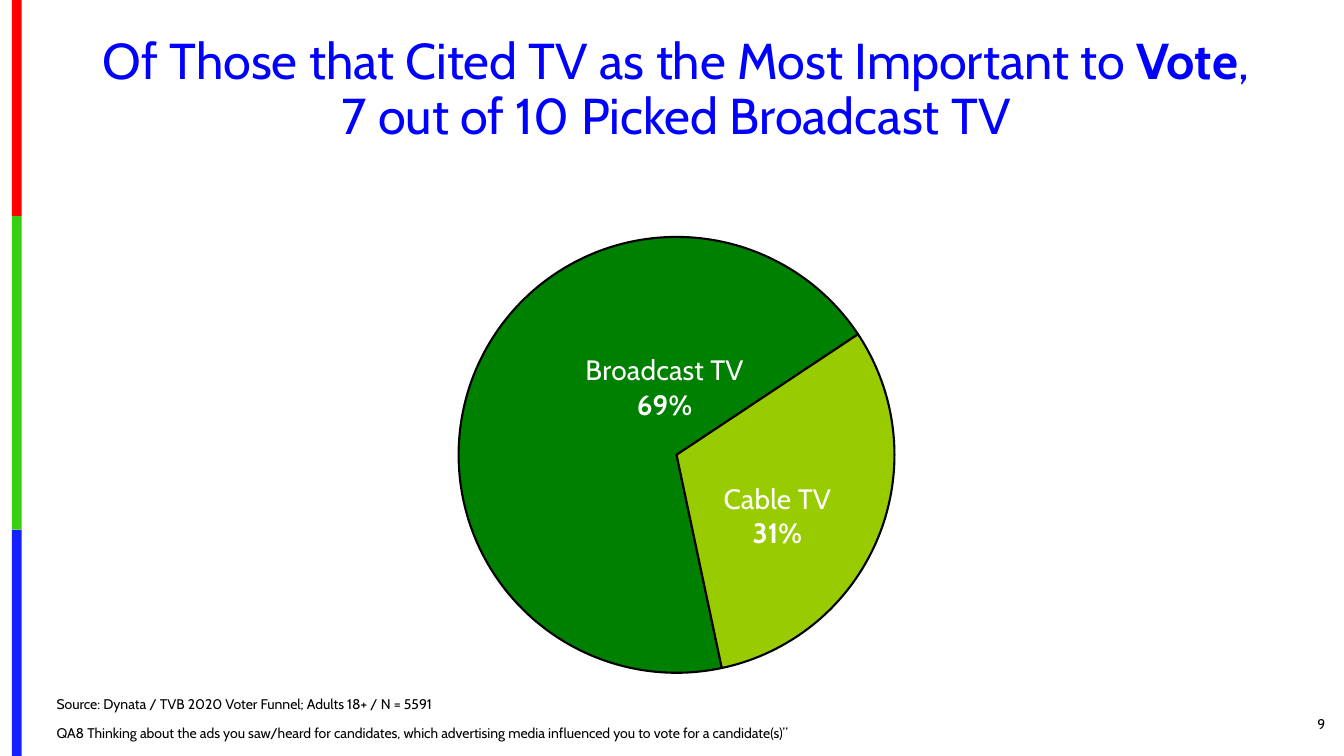
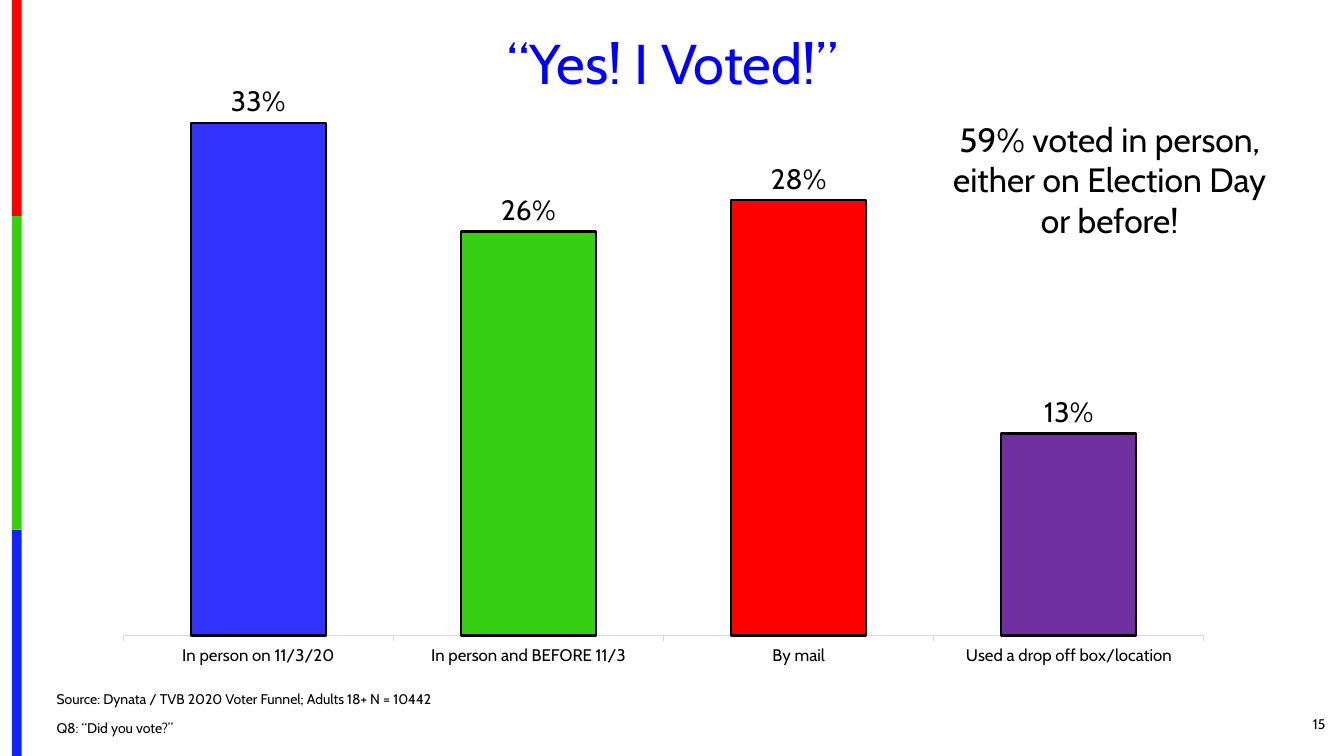
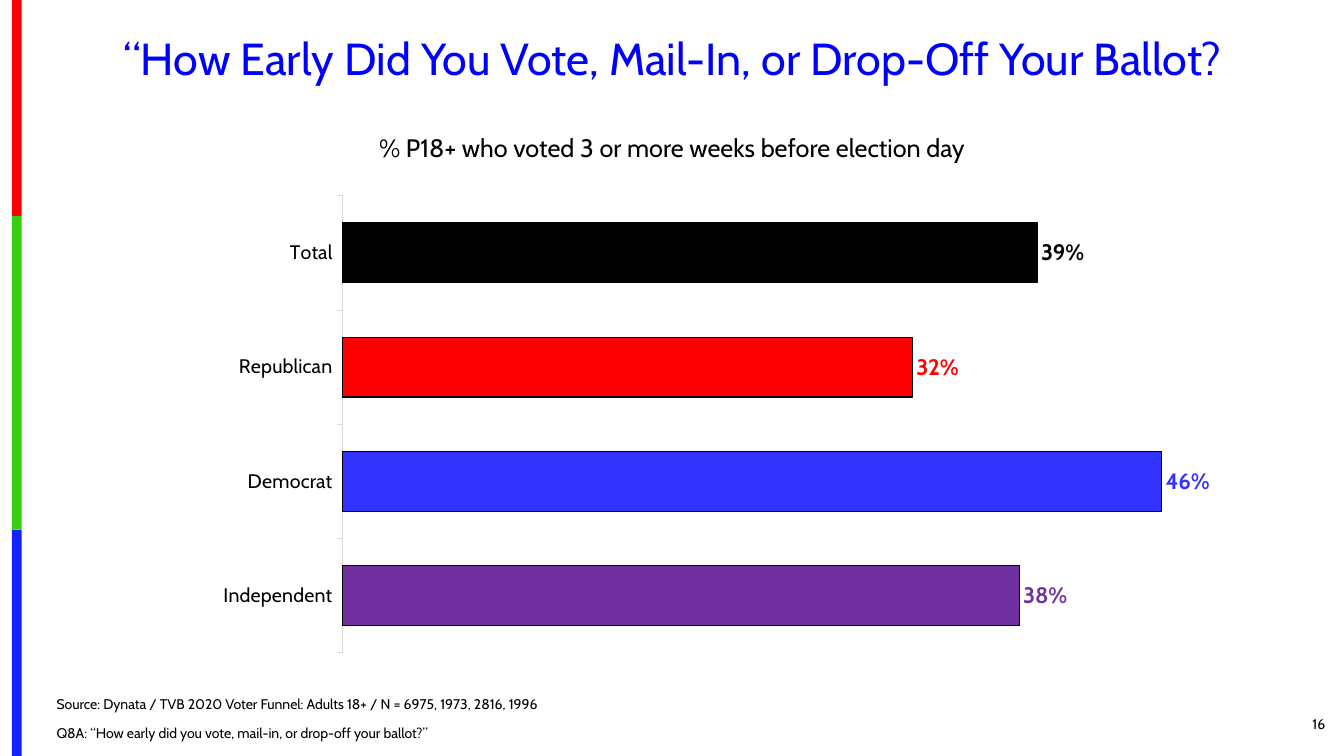
import copy
from dataclasses import dataclass

import pptx
import pptx.chart.chart
import pptx.chart.data
import pptx.dml.color
import pptx.enum.chart
import pptx.enum.shapes
import pptx.enum.text
import pptx.oxml
import pptx.oxml.ns
import pptx.slide
import pptx.text.text
import pptx.util

Cm, Pt = pptx.util.Cm, pptx.util.Pt
Align = pptx.enum.text.PP_ALIGN
Anchor = pptx.enum.text.MSO_ANCHOR
ChartType = pptx.enum.chart.XL_CHART_TYPE
LabelPosition = pptx.enum.chart.XL_LABEL_POSITION

FONT = "Cabin"
BLACK, WHITE, TITLE_BLUE, AXIS_GREY = "000000", "FFFFFF", "0000FF", "D9D9D9"
RED, GREEN, BLUE, PURPLE = "FF0000", "36CF13", "3333FF", "7030A0"
BROADCAST_GREEN, CABLE_GREEN = "008000", "99CC00"


@dataclass
class Box:
    """A place on the slide, in centimetres."""
    left: float
    top: float
    width: float
    height: float

    def lengths(self) -> tuple:
        return Cm(self.left), Cm(self.top), Cm(self.width), Cm(self.height)


@dataclass
class Stripe:
    top: float
    height: float
    color: str


@dataclass
class Span:
    text: str
    bold: bool = False


@dataclass
class Answer:
    label: str
    share: float
    color: str


@dataclass
class Frame:
    """What every slide carries: title, source lines and number."""
    title: list[list[Span]]
    title_box: Box
    title_size: int
    source_lines: list[str]
    source_box: Box
    number: str


@dataclass
class BarStyle:
    kind: ChartType
    top_share: float
    gap: int
    overlap: int
    line: float
    axis_size: int
    label_size: int
    bold_colored_labels: bool = False


STRIPES = [Stripe(0, 5.45, "FE0000"), Stripe(5.45, 7.9, "36CF12"),
           Stripe(13.35, 5.7, "1322FE")]
NUMBER_BOX = Box(30.91, 17.73, 2.74, 1.02)


def rgb(color: str) -> pptx.dml.color.RGBColor:
    return pptx.dml.color.RGBColor.from_string(color)


def style_font(font: pptx.text.text.Font, size: int, color: str,
               bold: bool = False) -> None:
    font.name, font.size, font.bold = FONT, Pt(size), bold
    font.color.rgb = rgb(color)


def add_run(paragraph, span: Span, size: int, color: str):
    run = paragraph.add_run()
    run.text = span.text
    style_font(run.font, size, color, span.bold)
    return run


def place(shape, box: Box) -> None:
    shape.left, shape.top, shape.width, shape.height = box.lengths()


def fit(frame, anchor: Anchor) -> None:
    frame.word_wrap = True
    frame.vertical_anchor = anchor
    frame.auto_size = pptx.enum.text.MSO_AUTO_SIZE.SHAPE_TO_FIT_TEXT


def add_text(slide: pptx.slide.Slide, box: Box, lines: list[str], size: int,
             align: Align, anchor: Anchor = Anchor.TOP) -> None:
    frame = slide.shapes.add_textbox(*box.lengths()).text_frame
    frame.word_wrap = True
    frame.vertical_anchor = anchor
    for index, line in enumerate(lines):
        paragraph = frame.add_paragraph() if index else frame.paragraphs[0]
        paragraph.alignment = align
        add_run(paragraph, Span(line), size, BLACK)


def add_stripes(slide: pptx.slide.Slide) -> None:
    """Draw the edge stripes and hand them to the shared layout."""
    for stripe in STRIPES:
        band = slide.shapes.add_shape(
            pptx.enum.shapes.MSO_SHAPE.RECTANGLE,
            *Box(0.3, stripe.top, 0.25, stripe.height).lengths())
        band.shadow.inherit = False
        band.fill.solid()
        band.fill.fore_color.rgb = rgb(stripe.color)
        band.line.fill.background()
        slide.slide_layout.shapes.element.append(band.element)


def add_slide(deck, frame: Frame) -> pptx.slide.Slide:
    slide = deck.slides.add_slide(deck.slide_layouts[1])

    # Title
    title = slide.shapes.title
    place(title, frame.title_box)
    fit(title.text_frame, Anchor.TOP)
    heading = title.text_frame.paragraphs[0]
    heading.alignment, heading.line_spacing = Align.CENTER, 0.9
    for index, line in enumerate(frame.title):
        if index:
            heading.add_line_break()
            heading._p[-1].append(copy.deepcopy(run._r.rPr))
        for span in line:
            run = add_run(heading, span, frame.title_size, TITLE_BLUE)

    # Source and question
    source = slide.placeholders[1]
    place(source, frame.source_box)
    fit(source.text_frame, Anchor.BOTTOM)
    for index, line in enumerate(frame.source_lines):
        paragraph = (source.text_frame.add_paragraph() if index
                     else source.text_frame.paragraphs[0])
        properties = paragraph._p.get_or_add_pPr()
        properties.set("marL", "0")
        properties.set("indent", "0")
        properties.append(pptx.oxml.parse_xml(
            f"<a:buNone {pptx.oxml.ns.nsdecls('a')}/>"))
        paragraph.line_spacing = 0.9
        paragraph.space_before = Pt(10 if index else 0)
        add_run(paragraph, Span(line), 10, BLACK)

    add_text(slide, NUMBER_BOX, [frame.number], 10, Align.RIGHT, Anchor.MIDDLE)
    return slide


def manual_layout(x: float, y: float, size: tuple[float, float] | None = None):
    """Plot-area layout when a size is given, label offset otherwise."""
    values = [("x", x), ("y", y)]
    modes = ""
    if size:
        values += [("w", size[0]), ("h", size[1])]
        modes = ('<c:layoutTarget val="inner"/><c:xMode val="edge"/>'
                 '<c:yMode val="edge"/>')
    sides = "".join(f'<c:{name} val="{value}"/>' for name, value in values)
    return pptx.oxml.parse_xml(
        f"<c:layout {pptx.oxml.ns.nsdecls('c')}><c:manualLayout>"
        f"{modes}{sides}</c:manualLayout></c:layout>")


def set_plot_area(chart: pptx.chart.chart.Chart, x: float, y: float,
                  width: float, height: float) -> None:
    area = chart.element.find(".//" + pptx.oxml.ns.qn("c:plotArea"))
    for layout in area.findall(pptx.oxml.ns.qn("c:layout")):
        area.remove(layout)
    area.insert(0, manual_layout(x, y, (width, height)))


def add_answers(slide: pptx.slide.Slide, kind: ChartType, box: Box,
                answers: list[Answer], line: float, label_size: int,
                label_color: str) -> pptx.chart.chart.Chart:
    """Add a one-series chart with a colour per answer."""
    data = pptx.chart.data.CategoryChartData(number_format="0%")
    data.categories = [answer.label for answer in answers]
    data.add_series("Series 1", [answer.share for answer in answers])
    chart = slide.shapes.add_chart(kind, *box.lengths(), data).chart
    chart.has_legend = chart.has_title = False
    style_font(chart.font, 10, BLACK)
    series = chart.plots[0].series[0]
    for index, answer in enumerate(answers):
        look = series.points[index].format
        look.fill.solid()
        look.fill.fore_color.rgb = rgb(answer.color)
        look.line.color.rgb = rgb(BLACK)
        look.line.width = Pt(line)
    labels = series.data_labels
    labels.show_value = True
    labels.number_format, labels.number_format_is_linked = "0%", False
    style_font(labels.font, label_size, label_color)
    return chart


def add_pie(slide: pptx.slide.Slide, box: Box, answers: list[Answer],
            start: int, offsets: list[tuple[float, float]]) -> None:
    chart = add_answers(slide, ChartType.PIE, box, answers, 1.5, 20, WHITE)
    set_plot_area(chart, 0.324, 0.117, 0.343, 0.845)
    pie = chart.element.find(".//" + pptx.oxml.ns.qn("c:pieChart"))
    for angle in pie.findall(pptx.oxml.ns.qn("c:firstSliceAng")):
        pie.remove(angle)
    pie.append(pptx.oxml.parse_xml(
        f'<c:firstSliceAng {pptx.oxml.ns.nsdecls("c")} val="{start}"/>'))

    # Name over share, inside each slice
    series = chart.plots[0].series[0]
    for index, answer in enumerate(answers):
        label = series.points[index].data_label
        name = label.text_frame.paragraphs[0]
        add_run(name, Span(answer.label), 20, WHITE)
        share = label.text_frame.add_paragraph()
        add_run(share, Span(f"{answer.share:.0%}", True), 20, WHITE)
        label.position = LabelPosition.CENTER
    for entry, offset in zip(pie.iter(pptx.oxml.ns.qn("c:dLbl")), offsets):
        entry.insert(1, manual_layout(*offset))


def add_bars(slide: pptx.slide.Slide, box: Box, answers: list[Answer],
             style: BarStyle) -> pptx.chart.chart.Chart:
    chart = add_answers(slide, style.kind, box, answers, style.line,
                        style.label_size, BLACK)
    plot = chart.plots[0]
    plot.vary_by_categories = False
    plot.gap_width, plot.overlap = style.gap, style.overlap
    series = plot.series[0]
    series.data_labels.position = LabelPosition.OUTSIDE_END
    if style.bold_colored_labels:
        for index, answer in enumerate(answers):
            label = series.points[index].data_label
            style_font(label.font, style.label_size, answer.color, True)
            label.position = LabelPosition.OUTSIDE_END

    # Axes
    shares, names = chart.value_axis, chart.category_axis
    shares.visible = shares.has_major_gridlines = False
    shares.minimum_scale, shares.maximum_scale = 0, style.top_share
    names.major_tick_mark = pptx.enum.chart.XL_TICK_MARK.OUTSIDE
    names.format.line.color.rgb = rgb(AXIS_GREY)
    names.format.line.width = Pt(0.75)
    style_font(names.tick_labels.font, style.axis_size, BLACK)
    return chart


def main() -> None:
    deck = pptx.Presentation()
    deck.slide_width, deck.slide_height = Cm(33.87), Cm(19.05)

    # Broadcast against cable
    broadcast = add_slide(deck, Frame(
        [[Span("Of Those that Cited TV as the Most Important to "),
          Span("Vote", True), Span(",")],
         [Span("7 out of 10 Picked Broadcast TV")]],
        Box(0.84, 0.79, 32.39, 3.02), 36,
        ["Source: Dynata / TVB 2020 Voter Funnel; Adults 18+ / N = 5591",
         "QA8 Thinking about the ads you saw/heard for candidates, which "
         "advertising media influenced you to vote for a candidate(s)”"],
        Box(1.17, 17.45, 26.57, 1.37), "9"))
    add_stripes(broadcast)
    add_pie(broadcast, Box(1.17, 4.45, 32.05, 13),
            [Answer("Broadcast TV", 0.69, BROADCAST_GREEN),
             Answer("Cable TV", 0.31, CABLE_GREEN)],
            168, [(0.07, -0.05), (0, 0.04)])

    # Ways of voting
    voted = add_slide(deck, Frame(
        [[Span("“Yes! I Voted!”")]], Box(1.17, 0.79, 31.55, 1.8), 40,
        ["Source: Dynata / TVB 2020 Voter Funnel; Adults 18+ N = 10442",
         "Q8: “Did you vote?”"],
        Box(1.17, 17.32, 27, 1.37), "15"))
    add_bars(voted, Box(2.54, 2.01, 28.37, 15.06),
             [Answer("In person on 11/3/20", 0.33, BLUE),
              Answer("In person and BEFORE 11/3", 0.26, GREEN),
              Answer("By mail", 0.28, RED),
              Answer("Used a drop off box/location", 0.13, PURPLE)],
             BarStyle(ChartType.COLUMN_CLUSTERED, 0.35, 100, 0, 1.5, 12, 20))
    add_text(voted, Box(23.62, 2.87, 8.69, 3.33),
             ["59% voted in person,", "either on Election Day or before!"],
             24, Align.CENTER)

    # Early voters by party
    early = add_slide(deck, Frame(
        [[Span("“How Early Did You Vote, Mail-In, or Drop-Off Your Ballot?")]],
        Box(1.17, 0.79, 31.55, 1.5), 32,
        ["Source: Dynata / TVB 2020 Voter Funnel: Adults 18+ / "
         "N = 6975, 1973, 2816, 1996",
         "Q8A: “How early did you vote, mail-in, or drop-off your ballot?”"],
        Box(1.17, 17.45, 24, 1.37), "16"))
    parties = add_bars(early, Box(0.84, 4.45, 31.17, 12.12),
                       [Answer("Independent", 0.38, PURPLE),
                        Answer("Democrat", 0.46, BLUE),
                        Answer("Republican", 0.32, RED),
                        Answer("Total", 0.39, BLACK)],
                       BarStyle(ChartType.BAR_CLUSTERED, 0.5, 91, -14, 0.75,
                                14, 16, True))
    set_plot_area(parties, 0.25, 0.04, 0.72, 0.95)
    add_text(early, Box(8.36, 3.2, 17.15, 1.02),
             ["% P18+ who voted 3 or more weeks before election day"],
             18, Align.CENTER)

    deck.save("out.pptx")


if __name__ == "__main__":
    main()
